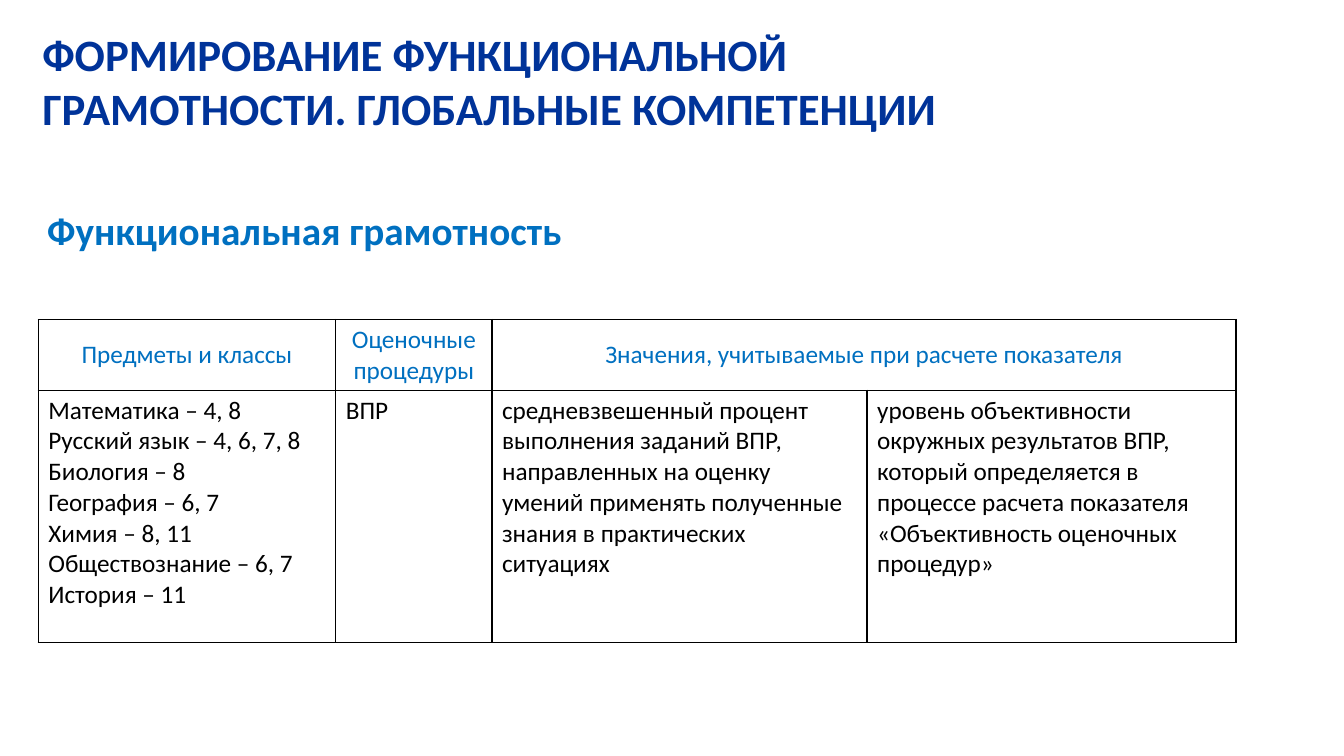
from lxml.etree import SubElement
from pptx import Presentation
from pptx.dml.color import RGBColor
from pptx.enum.text import MSO_ANCHOR, PP_ALIGN
from pptx.oxml.ns import qn
from pptx.util import Inches, Pt

NAVY = RGBColor(0x00, 0x33, 0x99)
BLUE = RGBColor(0x00, 0x70, 0xC0)
BLACK = RGBColor(0x00, 0x00, 0x00)
FONT = "Calibri"
WIDTHS = (2.95, 1.55, 3.72, 3.66)
HEIGHTS = (0.7, 2.5)
HEADS = (
    "Предметы и классы",
    "Оценочные процедуры",
    "Значения, учитываемые при расчете показателя",
)
BODY = (
    "Математика – 4, 8\nРусский язык – 4, 6, 7, 8\nБиология – 8\n"
    "География – 6, 7\nХимия – 8, 11\nОбществознание – 6, 7\nИстория – 11",
    "ВПР",
    "средневзвешенный процент выполнения заданий ВПР, направленных на оценку "
    "умений применять полученные знания в практических ситуациях",
    "уровень объективности окружных результатов ВПР, который определяется в "
    "процессе расчета показателя «Объективность оценочных процедур»",
)


def style(frame, size, color, bold=False, align=PP_ALIGN.LEFT):
    """Format every paragraph and run of a text frame."""
    for para in frame.paragraphs:
        para.alignment = align
        for run in para.runs:
            run.font.name = FONT
            run.font.size = Pt(size)
            run.font.bold = bold
            run.font.color.rgb = color


def add_label(slide, text, box, size, color, inset=0.1):
    """Add a bold wrapped text box."""
    frame = slide.shapes.add_textbox(*map(Inches, box)).text_frame
    frame.word_wrap = True
    frame.margin_left = frame.margin_right = Inches(inset)
    frame.text = text
    style(frame, size, color, bold=True)


def add_edges(cell):
    """Draw thin black borders on all sides of a cell."""
    props = cell._tc.get_or_add_tcPr()
    for spot, side in enumerate(("a:lnL", "a:lnR", "a:lnT", "a:lnB")):
        line = SubElement(props, qn(side), w=str(Pt(1)))
        fill = SubElement(line, qn("a:solidFill"))
        SubElement(fill, qn("a:srgbClr"), val=str(BLACK))
        props.insert(spot, line)


def fill_row(table, row, texts, color, align, anchor):
    """Write and format the texts of one table row."""
    for col, text in enumerate(texts):
        cell = table.cell(row, col)
        cell.text = text
        cell.vertical_anchor = anchor
        style(cell.text_frame, 18, color, align=align)


def add_grid(slide):
    """Add the table of subjects, procedures and values."""
    box = map(Inches, (0.38, 3.17, sum(WIDTHS), sum(HEIGHTS)))
    table = slide.shapes.add_table(len(HEIGHTS), len(WIDTHS), *box).table
    table.first_row = table.horz_banding = False
    for col, width in zip(table.columns, WIDTHS):
        col.width = Inches(width)
    for row, height in zip(table.rows, HEIGHTS):
        row.height = Inches(height)
    for cell in table.iter_cells():
        cell.fill.background()
        add_edges(cell)
    table.cell(0, 2).merge(table.cell(0, 3))
    fill_row(table, 0, HEADS, BLUE, PP_ALIGN.CENTER, MSO_ANCHOR.MIDDLE)
    fill_row(table, 1, BODY, BLACK, PP_ALIGN.LEFT, MSO_ANCHOR.TOP)


def main():
    """Build and save the slide."""
    deck = Presentation()
    deck.slide_width, deck.slide_height = Inches(13.33), Inches(7.5)
    slide = deck.slides.add_slide(deck.slide_layouts[6])
    add_label(slide, "Функциональная грамотность", (0.37, 2, 10.31, 0.57), 28, BLUE)
    add_grid(slide)
    add_label(
        slide,
        "ФОРМИРОВАНИЕ ФУНКЦИОНАЛЬНОЙ ГРАМОТНОСТИ. ГЛОБАЛЬНЫЕ КОМПЕТЕНЦИИ",
        (0.37, 0.22, 9.27, 1.18), 32, NAVY, 0.05,
    )
    deck.save("out.pptx")


if __name__ == "__main__":
    main()
